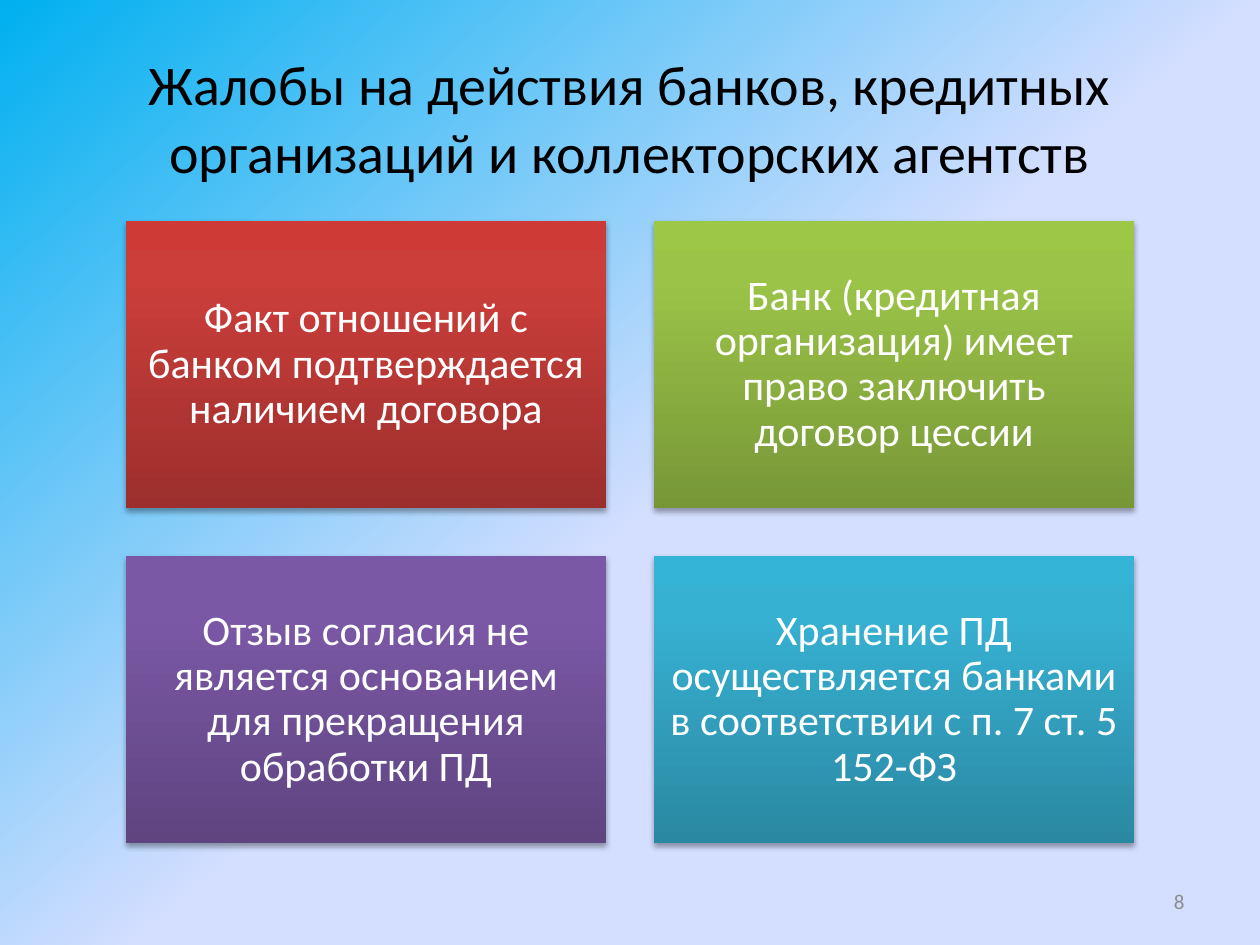
from lxml import etree
from pptx import Presentation
from pptx.dml.color import RGBColor
from pptx.enum.shapes import MSO_SHAPE
from pptx.enum.text import MSO_ANCHOR, PP_ALIGN
from pptx.oxml import parse_xml
from pptx.oxml.ns import nsdecls, qn
from pptx.util import Pt

PX = 914400 // 126
BOX_WIDTH, BOX_HEIGHT, GAP = 480, 287, 48
LEFT, TOP = 126, 221


def set_gradient(properties, stops, angle):
    """Replace the solid fill; stops are (percent, hex), angle is clockwise degrees."""
    gradient = parse_xml(f'<a:gradFill {nsdecls("a")} rotWithShape="1"><a:gsLst/>'
                         f'<a:lin ang="{angle * 60000}" scaled="0"/></a:gradFill>')
    for percent, color in stops:
        stop = etree.SubElement(gradient[0], qn("a:gs"), pos=str(percent * 1000))
        etree.SubElement(stop, qn("a:srgbClr"), val=color)
    solid = properties.find(qn("a:solidFill"))
    properties.replace(solid, gradient)


def write_text(shape, text, size, color, align=PP_ALIGN.CENTER, spacing=1.0, inset=None):
    frame = shape.text_frame
    frame.word_wrap = True
    frame.vertical_anchor = MSO_ANCHOR.MIDDLE
    if inset is not None:
        frame.margin_left = frame.margin_right = inset * PX
        frame.margin_top = frame.margin_bottom = inset * PX
    paragraph = frame.paragraphs[0]
    paragraph.alignment = align
    paragraph.line_spacing = spacing
    run = paragraph.add_run()
    run.text = text
    run.font.name = "Calibri"
    run.font.size = Pt(size)
    run.font.color.rgb = RGBColor.from_string(color)


presentation = Presentation()
presentation.slide_width = 1260 * PX
presentation.slide_height = 945 * PX
slide = presentation.slides.add_slide(presentation.slide_layouts[6])

slide.background.fill.solid()
set_gradient(slide.element.cSld.bg.bgPr,
             [(0, "00B0F0"), (53, "D4DEFF"), (100, "D4DEFF")], 50)

title = slide.shapes.add_textbox(63 * PX, 38 * PX, 1134 * PX, 158 * PX)
write_text(title, "Жалобы на действия банков, кредитных организаций и коллекторских агентств",
           size=32, color="000000")

# Text, then the gradient from bottom to top
boxes = [
    ("Факт отношений с банком подтверждается наличием договора",
     ("9C2F2D", "CB3E3A", "CE3B37")),
    ("Банк (кредитная организация) имеет право заключить договор цессии",
     ("779737", "9BC348", "9DC746")),
    ("Отзыв согласия не является основанием для прекращения обработки ПД",
     ("5F4480", "7B58A6", "7C57A8")),
    ("Хранение ПД осуществляется банками в соответствии с п. 7 ст. 5 152-ФЗ",
     ("2A88A2", "37B1D2", "34B4D6")),
]
for index, (text, colors) in enumerate(boxes):
    row, column = divmod(index, 2)
    box = slide.shapes.add_shape(
        MSO_SHAPE.RECTANGLE,
        (LEFT + column * (BOX_WIDTH + GAP)) * PX, (TOP + row * (BOX_HEIGHT + GAP)) * PX,
        BOX_WIDTH * PX, BOX_HEIGHT * PX)
    box.fill.solid()
    box.line.fill.background()
    properties = box.element.spPr
    set_gradient(properties, zip((0, 80, 100), colors), 270)
    box.shadow.inherit = False
    properties.find(qn("a:effectLst")).append(parse_xml(
        f'<a:outerShdw {nsdecls("a")} blurRad="{Pt(3.1)}" dist="{Pt(1.8)}" dir="5400000" '
        'rotWithShape="0"><a:srgbClr val="000000"><a:alpha val="35000"/></a:srgbClr>'
        '</a:outerShdw>'))
    write_text(box, text, size=24, color="FFFFFF", spacing=0.9, inset=12)

page_number = slide.shapes.add_textbox(903 * PX, 876 * PX, 294 * PX, 50 * PX)
write_text(page_number, "8", size=12, color="8C8C8C", align=PP_ALIGN.RIGHT)

presentation.save("out.pptx")
